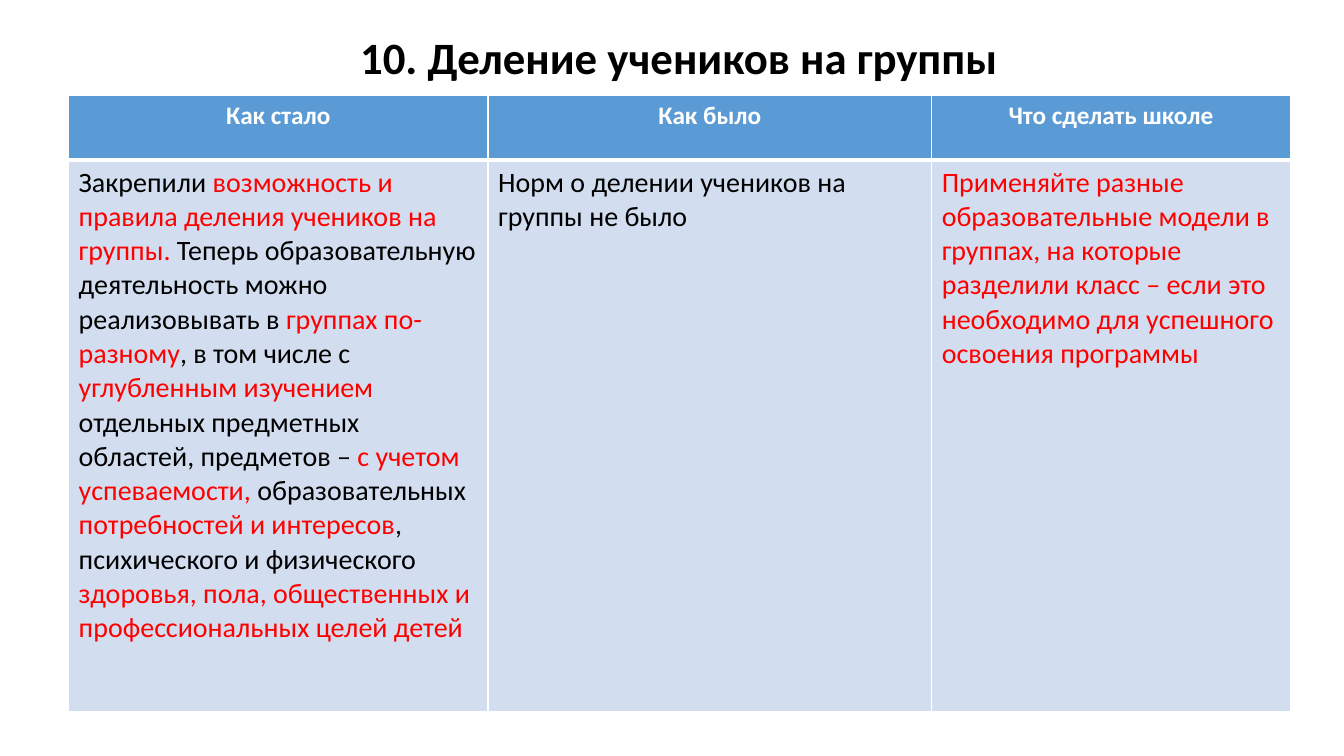
from lxml import etree
from pptx import Presentation
from pptx.dml.color import RGBColor
from pptx.enum.text import MSO_ANCHOR, PP_ALIGN
from pptx.oxml.ns import qn
from pptx.util import Cm, Pt

CENTER, LEFT = PP_ALIGN.CENTER, PP_ALIGN.LEFT
MIDDLE = MSO_ANCHOR.MIDDLE
FONT = "Calibri"
COLORS = {"black": "000000", "white": "FFFFFF", "red": "FF0000",
          "header": "5B9BD5", "body": "D2DEEF"}

TITLE = "10. Деление учеников на группы"
HEADERS = ["Как стало", "Как было", "Что сделать школе"]
BODY = [
    [("Закрепили ", "black"),
     ("возможность и правила деления учеников на группы. ", "red"),
     ("Теперь образовательную деятельность можно реализовывать в ", "black"),
     ("группах по-разному", "red"),
     (", в том числе с ", "black"),
     ("углубленным изучением ", "red"),
     ("отдельных предметных областей, предметов – ", "black"),
     ("с учетом успеваемости,", "red"),
     (" образовательных ", "black"),
     ("потребностей и интересов", "red"),
     (", психического и физического ", "black"),
     ("здоровья, пола, общественных и профессиональных целей детей", "red")],
    [("Норм о делении учеников на группы не было", "black")],
    [("Применяйте разные образовательные модели в группах, на которые разделили "
      "класс – если это необходимо для успешного освоения программы", "red")],
]
COLUMN_WIDTHS = [10.57, 11.18, 9.04]
ROW_HEIGHTS = [1.63, 13.89]


def write_spans(para, spans, size, bold, align):
    """Fill a paragraph with coloured runs of one size and weight."""
    para.alignment = align
    for text, color in spans:
        span = para.add_run()
        span.text = text
        span.font.name = FONT
        span.font.size = Pt(size)
        span.font.bold = bold
        span.font.color.rgb = RGBColor.from_string(COLORS[color])


def add_borders(cell, top, bottom):
    """Draw white cell borders with the given top and bottom widths in points."""
    properties = cell._tc.get_or_add_tcPr()
    for tag, width in (("a:lnL", 1), ("a:lnR", 1), ("a:lnT", top), ("a:lnB", bottom)):
        line = etree.SubElement(properties, qn(tag), w=str(Pt(width)))
        fill = etree.SubElement(line, qn("a:solidFill"))
        etree.SubElement(fill, qn("a:srgbClr"), val=COLORS["white"])


def add_title(page, left, top, width, height):
    """Place the centred slide heading in the given box."""
    box = page.shapes.add_textbox(Cm(left), Cm(top), Cm(width), Cm(height))
    frame = box.text_frame
    frame.word_wrap = True
    frame.vertical_anchor = MIDDLE
    para = frame.paragraphs[0]
    para.line_spacing = 0.9
    write_spans(para, [(TITLE, "black")], 32, True, CENTER)


def add_comparison(page, left, top):
    """Place the comparison table with its top left corner at the given point."""
    table = page.shapes.add_table(
        len(ROW_HEIGHTS), len(COLUMN_WIDTHS), Cm(left), Cm(top),
        Cm(sum(COLUMN_WIDTHS)), Cm(sum(ROW_HEIGHTS))).table
    for column, width in zip(table.columns, COLUMN_WIDTHS):
        column.width = Cm(width)
    for row, height in zip(table.rows, ROW_HEIGHTS):
        row.height = Cm(height)
    header_spans = [[(text, "white")] for text in HEADERS]
    rows = [(header_spans, "header", 18, True, CENTER, 1, 3),
            (BODY, "body", 20, False, LEFT, 3, 1)]
    for row, (contents, fill, size, bold, align, above, below) in zip(table.rows, rows):
        for cell, spans in zip(row.cells, contents):
            add_borders(cell, above, below)
            cell.fill.solid()
            cell.fill.fore_color.rgb = RGBColor.from_string(COLORS[fill])
            write_spans(cell.text_frame.paragraphs[0], spans, size, bold, align)


def main():
    """Build the deck and save it."""
    deck = Presentation()
    deck.slide_width, deck.slide_height = Cm(33.87), Cm(19.05)
    page = deck.slides.add_slide(deck.slide_layouts[6])
    add_title(page, 2.51, 0.2, 29.21, 2.64)
    add_comparison(page, 1.73, 2.41)
    deck.save("out.pptx")


if __name__ == "__main__":
    main()
